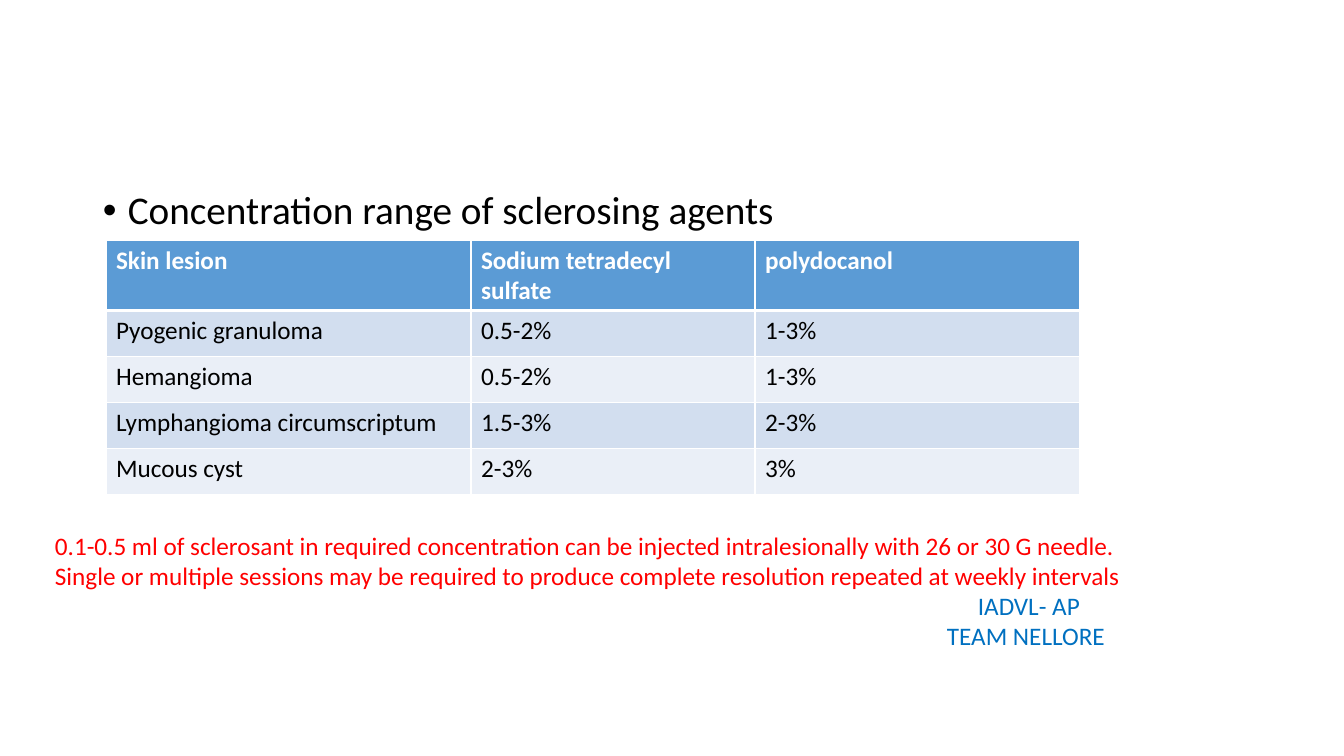
import pptx
import pptx.dml.color
import pptx.enum.text
import pptx.oxml
import pptx.oxml.ns
import pptx.util

HUE = {"ink": "000000", "white": "FFFFFF", "head": "5B9BD5", "odd": "D2DEEF",
       "even": "EAEFF7", "red": "FF0000", "blue": "0070C0"}
SIZE = (1344, 756)
TITLE = "Concentration range of sclerosing agents"
ROWS = [
    ("Skin lesion", "Sodium tetradecyl sulfate", "polydocanol"),
    ("Pyogenic granuloma", "0.5-2%", "1-3%"),
    ("Hemangioma", "0.5-2%", "1-3%"),
    ("Lymphangioma circumscriptum", "1.5-3%", "2-3%"),
    ("Mucous cyst", "2-3%", "3%"),
]
NOTES = [
    ("0.1-0.5 ml of sclerosant in required concentration can be injected "
     "intralesionally with 26 or 30 G needle.", "red", 0),
    ("Single or multiple sessions may be required to produce complete "
     "resolution repeated at weekly intervals", "red", 0),
    ("IADVL- AP", "blue", 923),
    ("TEAM NELLORE", "blue", 892),
]
WIDE = (365, 284, 325)
TALL = (66, 46, 46, 46, 46)
SPOT = {"title": (93, 186, 1159, 480), "table": (106, 240, sum(WIDE), sum(TALL)),
        "notes": (45, 525, 1207, 163)}


def px(n):
    return pptx.util.Emu(round(n * 914400 / 100.8))


def style(para, hue, **more):
    form = {"name": "Calibri", "size": pptx.util.Pt(18), "bold": False, **more}
    for key, value in form.items():
        setattr(para.font, key, value)
    para.font.color.rgb = pptx.dml.color.RGBColor.from_string(HUE[hue])


def box(slide, spot):
    frame = slide.shapes.add_textbox(*map(px, SPOT[spot])).text_frame
    frame.word_wrap = True
    return frame


def title(slide):
    para = box(slide, "title").paragraphs[0]
    para.text = TITLE
    para.line_spacing = 0.9
    props = para._p.get_or_add_pPr()
    props.set("marL", str(px(25)))
    props.set("indent", str(px(-25)))
    space = pptx.oxml.ns.nsdecls("a")
    for tag in (f'<a:buFont {space} typeface="Arial"/>', f'<a:buChar {space} char="•"/>'):
        props.append(pptx.oxml.parse_xml(tag))
    style(para, "ink", size=pptx.util.Pt(28))


def edge(cell, base):
    props = cell._tc.get_or_add_tcPr()
    for i, side in enumerate("LRTB"):
        width = pptx.util.Pt(base.get(side, 1))
        props.insert(i, pptx.oxml.parse_xml(
            f'<a:ln{side} {pptx.oxml.ns.nsdecls("a")} w="{width}"><a:solidFill>'
            f'<a:srgbClr val="{HUE["white"]}"/></a:solidFill></a:ln{side}>'))


def table(slide):
    grid = slide.shapes.add_table(len(ROWS), len(WIDE), *map(px, SPOT["table"])).table
    for col, width in zip(grid.columns, WIDE):
        col.width = px(width)
    for r, (row, high) in enumerate(zip(ROWS, TALL)):
        grid.rows[r].height = px(high)
        fill = "head" if r == 0 else "odd" if r % 2 else "even"
        for c, text in enumerate(row):
            cell = grid.cell(r, c)
            cell.text = text
            cell.fill.solid()
            cell.fill.fore_color.rgb = pptx.dml.color.RGBColor.from_string(HUE[fill])
            edge(cell, {"B": 3} if r == 0 else {"T": 3} if r == 1 else {})
            style(cell.text_frame.paragraphs[0], "ink" if r else "white", bold=r == 0)


def notes(slide):
    frame = box(slide, "notes")
    for i, (text, hue, left) in enumerate(NOTES):
        para = frame.add_paragraph() if i else frame.paragraphs[0]
        para.text = text
        para._p.get_or_add_pPr().set("marL", str(px(left)))
        style(para, hue)


def main():
    deck = pptx.Presentation()
    deck.slide_width, deck.slide_height = map(px, SIZE)
    slide = deck.slides.add_slide(deck.slide_layouts[6])
    title(slide)
    table(slide)
    notes(slide)
    deck.save("out.pptx")


if __name__ == "__main__":
    main()
